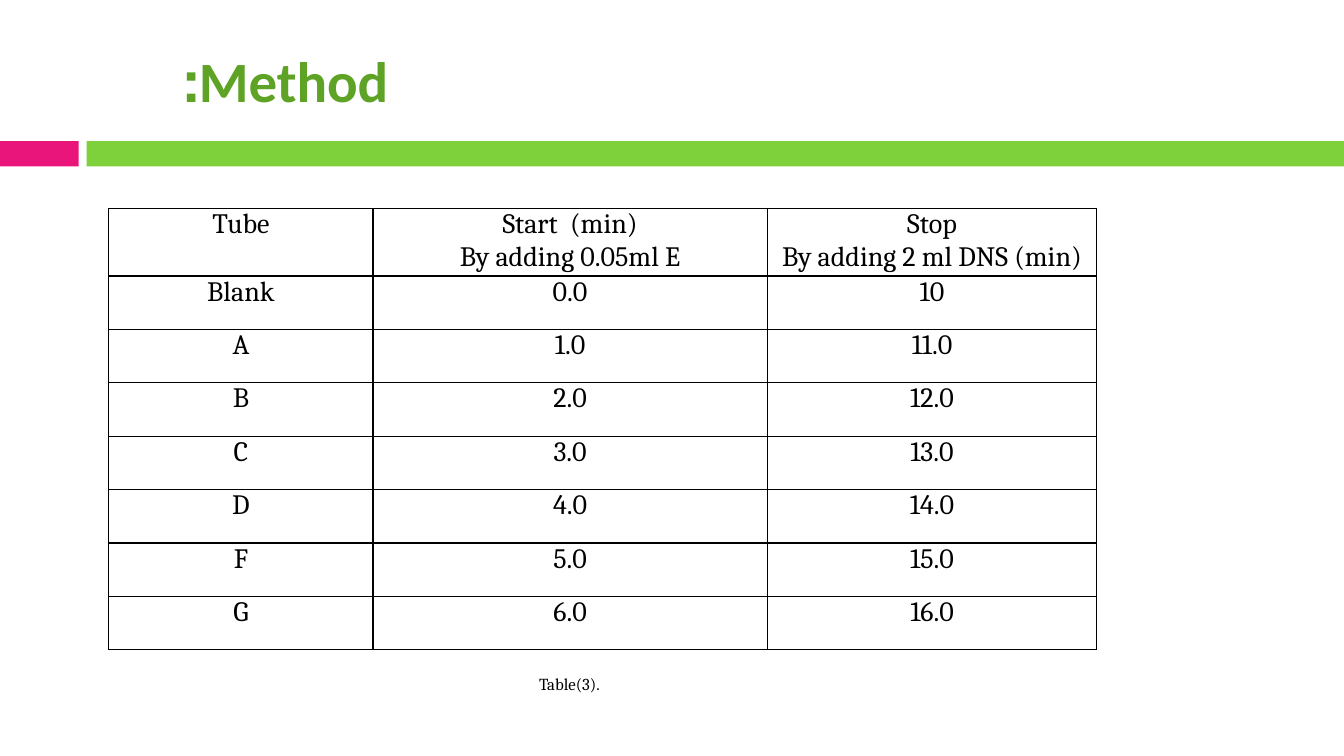
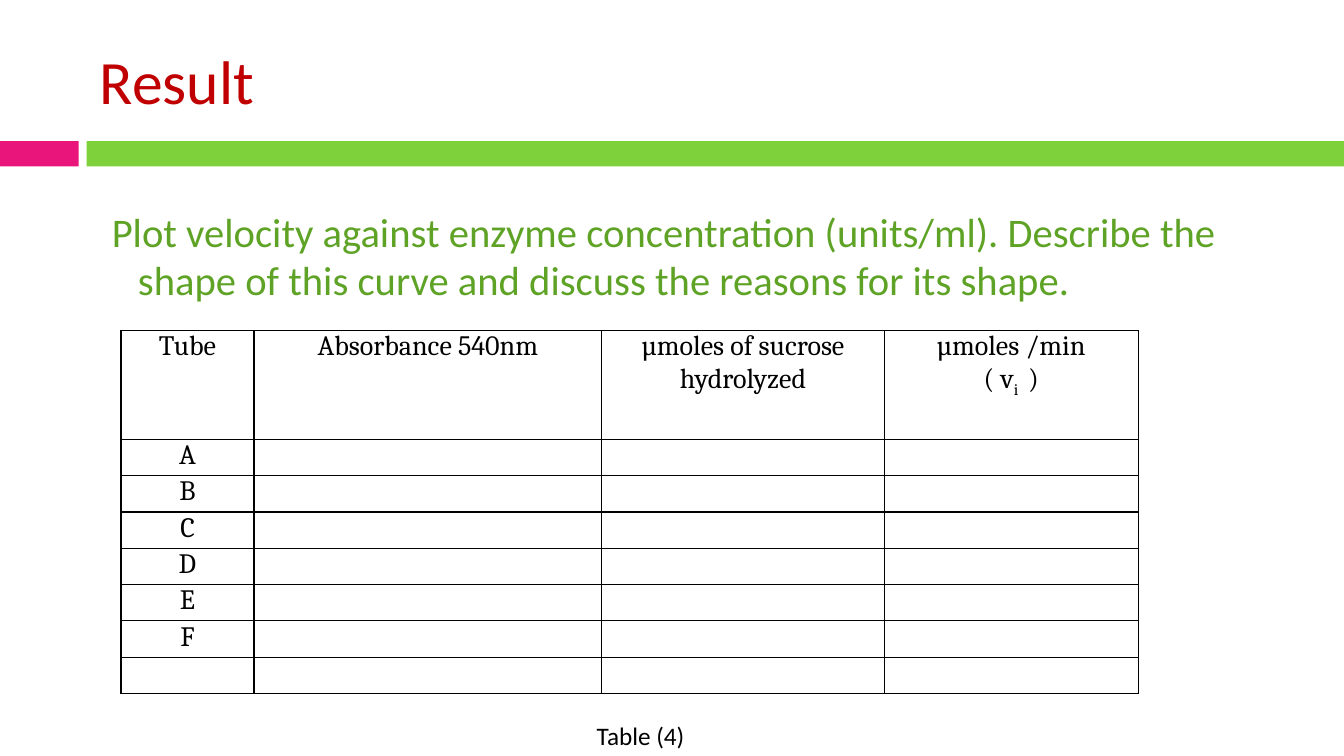
import lxml.etree
import pptx
import pptx.dml.color
import pptx.enum.shapes
import pptx.enum.text
import pptx.oxml.ns
import pptx.util

Inches = pptx.util.Inches
Pt = pptx.util.Pt
ALIGN = pptx.enum.text.PP_ALIGN
ANCHOR = pptx.enum.text.MSO_ANCHOR


def color(hex_value):
    return pptx.dml.color.RGBColor.from_string(hex_value)


class Deck:
    PINK = "EA157A"
    LIME = "7FD13B"
    GREEN = "5FA326"
    RED = "C00000"
    BLACK = "000000"
    SANS = "Calibri"
    SERIF = "Cambria"
    WIDTH = 13.33

    def __init__(self):
        self.presentation = pptx.Presentation()
        self.presentation.slide_width = Inches(self.WIDTH)
        self.presentation.slide_height = Inches(7.5)
        self.slide = None

    def new_slide(self):
        self.slide = self.presentation.slides.add_slide(self.presentation.slide_layouts[6])
        self.band(0, 0.78, self.PINK)
        self.band(0.86, self.WIDTH - 0.86, self.LIME)

    def band(self, left, width, fill):
        stripe = self.slide.shapes.add_shape(
            pptx.enum.shapes.MSO_SHAPE.RECTANGLE,
            Inches(left), Inches(1.4), Inches(width), Inches(0.25))
        stripe.shadow.inherit = False
        stripe.fill.solid()
        stripe.fill.fore_color.rgb = color(fill)
        stripe.line.fill.background()

    def style(self, paragraph, size, font, ink, bold=False):
        for run in paragraph.runs:
            run.font.size = Pt(size)
            run.font.name = font
            run.font.color.rgb = color(ink)
            run.font.bold = bold

    def text(self, box, wording, size, font, ink, bold=False, anchor=ANCHOR.TOP):
        frame = self.slide.shapes.add_textbox(*map(Inches, box)).text_frame
        frame.word_wrap = True
        frame.vertical_anchor = anchor
        frame.text = wording
        paragraph = frame.paragraphs[0]
        self.style(paragraph, size, font, ink, bold)
        return paragraph

    def title(self, wording, size, ink, width=11.89, bold=False):
        return self.text((0.89, 0.25, width, 1.08), wording, size, self.SANS, ink,
                         bold, ANCHOR.MIDDLE)

    def right_to_left(self, paragraph):
        paragraph.alignment = ALIGN.RIGHT
        paragraph._p.get_or_add_pPr().set("rtl", "1")

    def hanging(self, paragraph, margin, indent):
        properties = paragraph._p.get_or_add_pPr()
        properties.set("marL", str(Inches(margin)))
        properties.set("indent", str(Inches(indent)))

    def table(self, left, top, widths, heights, rows):
        grid = self.slide.shapes.add_table(
            len(heights), len(widths), Inches(left), Inches(top),
            Inches(sum(widths)), Inches(sum(heights))).table
        grid.first_row = False
        grid.horz_banding = False
        for column, width in zip(grid.columns, widths):
            column.width = Inches(width)
        for row, height, wordings in zip(grid.rows, heights, rows):
            row.height = Inches(height)
            for cell, wording in zip(row.cells, wordings):
                self.cell(cell, wording)
        return grid

    def cell(self, cell, wording):
        cell.margin_left = cell.margin_right = Inches(0.07)
        cell.margin_top = cell.margin_bottom = 0
        self.borders(cell)
        cell.fill.background()
        cell.text_frame.text = wording
        for paragraph in cell.text_frame.paragraphs:
            paragraph.alignment = ALIGN.CENTER
            self.style(paragraph, 20, self.SERIF, self.BLACK)

    def borders(self, cell):
        qn = pptx.oxml.ns.qn
        properties = cell._tc.get_or_add_tcPr()
        for side in ("a:lnL", "a:lnR", "a:lnT", "a:lnB"):
            edge = lxml.etree.SubElement(properties, qn(side), w=str(Pt(1)))
            fill = lxml.etree.SubElement(edge, qn("a:solidFill"))
            lxml.etree.SubElement(fill, qn("a:srgbClr"), val=self.BLACK)

    def subscript(self, paragraph, before, lowered, after):
        paragraph.text = before
        for wording in (lowered, after):
            paragraph.add_run().text = wording
        self.style(paragraph, 20, self.SERIF, self.BLACK)
        paragraph.runs[1]._r.get_or_add_rPr().set("baseline", "-25000")

    def save(self):
        self.presentation.save("out.pptx")


def method_slide(deck):
    deck.new_slide()
    deck.right_to_left(deck.title("Method:", 40.7, deck.GREEN, width=3.06, bold=True))
    timings = [("Tube", "Start  (min)\nBy adding 0.05ml E", "Stop\nBy adding 2 ml DNS (min)"),
               ("Blank", "0.0", "10")]
    timings += [(tube, f"{start}.0", f"{start + 10}.0")
                for start, tube in enumerate("ABCDFG", 1)]
    deck.table(1.08, 2.07, [2.62, 3.91, 3.27], [0.64] + [0.53] * 7, timings)
    deck.text((5.25, 6.63, 1.14, 0.61), "Table(3).", 12, deck.SERIF, deck.BLACK)


def result_slide(deck):
    deck.new_slide()
    deck.title("Result", 44, deck.RED)
    task = deck.text(
        (0.92, 2, 11.91, 1.2),
        "Plot velocity against enzyme concentration (units/ml). Describe the shape of this "
        "curve and discuss the reasons for its shape.", 29, deck.SANS, deck.GREEN)
    deck.hanging(task, 0.35, -0.26)
    deck.text((5.82, 7.1, 1.08, 0.4), "Table (4)", 18, deck.SANS, deck.BLACK)
    readings = [("Tube", "Absorbance 540nm", "µmoles of sucrose hydrolyzed", "µmoles /min\n")]
    readings += [(tube, "", "", "") for tube in [*"ABCDEF", ""]]
    results = deck.table(1.2, 3.28, [1.32, 3.45, 2.8, 2.52], [1.08] + [0.36] * 7, readings)
    velocity = results.cell(0, 3).text_frame.paragraphs[1]
    deck.subscript(velocity, "( v", "i ", " )")


def main():
    deck = Deck()
    method_slide(deck)
    result_slide(deck)
    deck.save()


if __name__ == "__main__":
    main()
